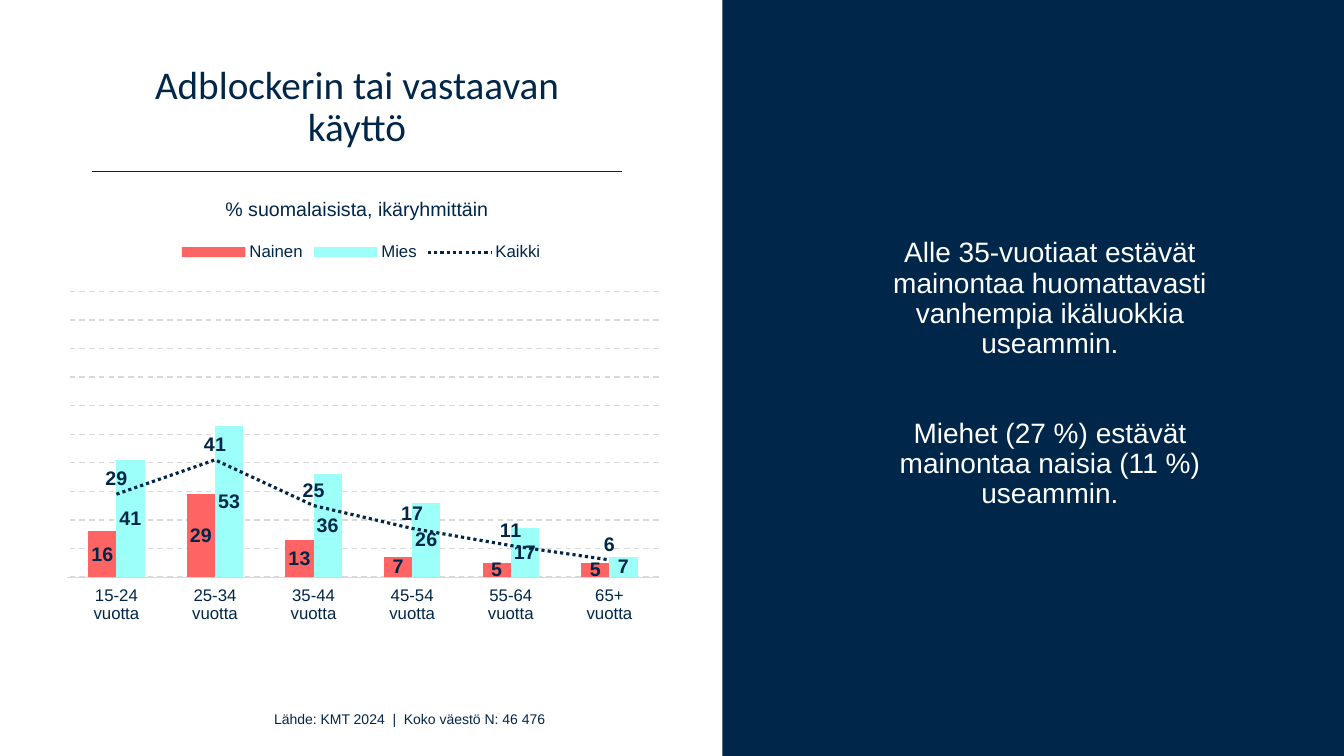
from lxml import etree
from pptx import Presentation
from pptx.chart.data import CategoryChartData
from pptx.dml.color import RGBColor
from pptx.enum.chart import (XL_CHART_TYPE, XL_LABEL_POSITION, XL_LEGEND_POSITION, XL_MARKER_STYLE,
                             XL_TICK_LABEL_POSITION, XL_TICK_MARK)
from pptx.enum.dml import MSO_LINE
from pptx.enum.shapes import MSO_CONNECTOR, MSO_SHAPE
from pptx.enum.text import MSO_ANCHOR, PP_ALIGN
from pptx.oxml import parse_xml
from pptx.oxml.ns import nsdecls, qn
from pptx.util import Inches, Pt

COLUMN_CLUSTERED = XL_CHART_TYPE.COLUMN_CLUSTERED
LABEL_CENTER, LABEL_ABOVE = XL_LABEL_POSITION.CENTER, XL_LABEL_POSITION.ABOVE
LEGEND_TOP = XL_LEGEND_POSITION.TOP
LABELS_LOW = XL_TICK_LABEL_POSITION.LOW
NO_TICK, NO_MARKER = XL_TICK_MARK.NONE, XL_MARKER_STYLE.NONE
DASH, DOTS = MSO_LINE.DASH, MSO_LINE.ROUND_DOT
STRAIGHT, RECTANGLE = MSO_CONNECTOR.STRAIGHT, MSO_SHAPE.RECTANGLE
TOP, MIDDLE, BOTTOM = MSO_ANCHOR.TOP, MSO_ANCHOR.MIDDLE, MSO_ANCHOR.BOTTOM
CENTER = PP_ALIGN.CENTER

NAVY, CORAL, AQUA, GREY, WHITE = "002649", "FF6464", "9CFFF8", "D9D9D9", "FFFFFF"
color = RGBColor.from_string

presentation = Presentation()
presentation.slide_width, presentation.slide_height = Inches(13.33), Inches(7.5)
COLUMN = presentation.slide_width / 160
ROW = presentation.slide_height / 90
MARGIN, CONTENT_COLUMNS, PANEL_LEFT = 11, 63, 86
slide = presentation.slides.add_slide(presentation.slide_layouts[6])


def cells(left, top, width, height):
    return int(left * COLUMN), int(top * ROW), int(width * COLUMN), int(height * ROW)


def add_text(area, paragraphs, size, font_color, font_name="Arial", anchor=TOP, spacing=1.0, gap=0, wrap=True):
    text_frame = slide.shapes.add_textbox(*cells(*area)).text_frame
    text_frame.word_wrap = wrap
    text_frame.vertical_anchor = anchor
    text_frame.text = "\n".join(paragraphs)
    for index, paragraph in enumerate(text_frame.paragraphs):
        paragraph.alignment = CENTER
        paragraph.line_spacing = spacing
        if index:
            paragraph.space_before = Pt(gap)
        for run in paragraph.runs:
            run.font.name, run.font.size = font_name, Pt(size)
            run.font.color.rgb = color(font_color)


panel = slide.shapes.add_shape(RECTANGLE, *cells(PANEL_LEFT, 0, 160 - PANEL_LEFT, 90))
panel.shadow.inherit = False
panel.fill.solid()
panel.fill.fore_color.rgb = color(NAVY)
panel.line.fill.background()

left, top, width, height = cells(MARGIN, 20.4, CONTENT_COLUMNS, 0)
title_rule = slide.shapes.add_connector(STRAIGHT, left, top, left + width, top)
title_rule.line.color.rgb = color(NAVY)
title_rule.line.width = Pt(1)
etree.SubElement(title_rule._element.spPr, qn("a:effectLst"))

add_text((MARGIN, 2.3, CONTENT_COLUMNS, 16.2), ["Adblockerin tai vastaavan käyttö"],
         28, NAVY, font_name="Calibri", anchor=BOTTOM, spacing=0.9)
add_text((101, 17.2, 48, 54.7),
         ["Alle 35-vuotiaat estävät mainontaa huomattavasti vanhempia ikäluokkia useammin.",
          "Miehet (27 %) estävät mainontaa naisia (11 %) useammin."],
         20, WHITE, anchor=MIDDLE, spacing=0.9, gap=42.5)
add_text((MARGIN, 22.9, CONTENT_COLUMNS, 4.1), ["% suomalaisista, ikäryhmittäin"], 14, NAVY)
add_text((31.4, 84, 34.7, 3.2), ["Lähde: KMT 2024  |  Koko väestö N: 46 476"], 10, NAVY, wrap=False)

chart_data = CategoryChartData()
chart_data.categories = [f"{ages}\nvuotta" for ages in ("15-24", "25-34", "35-44", "45-54", "55-64", "65+")]
chart_data.add_series("Nainen", (16, 29, 13, 7, 5, 5))
chart_data.add_series("Mies", (41, 53, 36, 26, 17, 7))
chart_data.add_series("Kaikki", (29, 41, 25, 17, 11, 6))
chart = slide.shapes.add_chart(COLUMN_CLUSTERED, *cells(0, 27.6, PANEL_LEFT, 52.1), chart_data).chart
chart.has_title = False
chart.font.name, chart.font.size = "Arial", Pt(12)
chart.font.color.rgb = color(NAVY)
chart.has_legend = True
chart.legend.position = LEGEND_TOP
chart.legend.include_in_layout = False

bars = chart.plots[0]
bars.vary_by_categories = False
bars.gap_width, bars.overlap = 150, 0

category_axis = chart.category_axis
category_axis.tick_label_position = LABELS_LOW
category_axis.major_tick_mark = NO_TICK
category_axis.format.line.color.rgb = color(GREY)
category_axis.format.line.width = Pt(0.75)

value_axis = chart.value_axis
value_axis.visible = False
value_axis.minimum_scale, value_axis.maximum_scale, value_axis.major_unit = 0, 100, 10
value_axis.has_major_gridlines = True
gridline = value_axis.major_gridlines.format.line
gridline.color.rgb = color(GREY)
gridline.width, gridline.dash_style = Pt(1), DASH

plot_area = chart._chartSpace.find(".//" + qn("c:plotArea"))
for layout in plot_area.findall(qn("c:layout")):
    plot_area.remove(layout)
plot_area.insert(0, parse_xml(
    f'<c:layout {nsdecls("c")}><c:manualLayout><c:layoutTarget val="inner"/>'
    '<c:xMode val="edge"/><c:yMode val="edge"/><c:x val="0.093"/><c:y val="0.136"/>'
    '<c:w val="0.819"/><c:h val="0.653"/></c:manualLayout></c:layout>'))

bar_chart = plot_area.find(qn("c:barChart"))
line_chart = parse_xml(
    f'<c:lineChart {nsdecls("c")}><c:grouping val="standard"/><c:varyColors val="0"/>'
    '<c:marker val="1"/></c:lineChart>')
total_series = bar_chart.findall(qn("c:ser"))[2]
for bar_setting in total_series.findall(qn("c:invertIfNegative")):
    total_series.remove(bar_setting)
line_chart.insert(2, total_series)
for axis in bar_chart.findall(qn("c:axId")):
    etree.SubElement(line_chart, qn("c:axId")).set("val", axis.get("val"))
bar_chart.addnext(line_chart)

women, men = chart.plots[0].series
total = chart.plots[1].series[0]
for series, fill_color in ((women, CORAL), (men, AQUA)):
    series.format.fill.solid()
    series.format.fill.fore_color.rgb = color(fill_color)
total.smooth = False
total.format.line.color.rgb = color(NAVY)
total.format.line.width, total.format.line.dash_style = Pt(2.25), DOTS
total.marker.style = NO_MARKER

for series, position in ((women, LABEL_CENTER), (men, LABEL_CENTER), (total, LABEL_ABOVE)):
    labels = series.data_labels
    labels.show_value = True
    labels.position = position
    labels.font.name, labels.font.size, labels.font.bold = "Arial", Pt(14), True
    labels.font.color.rgb = color(NAVY)

presentation.save("out.pptx")
